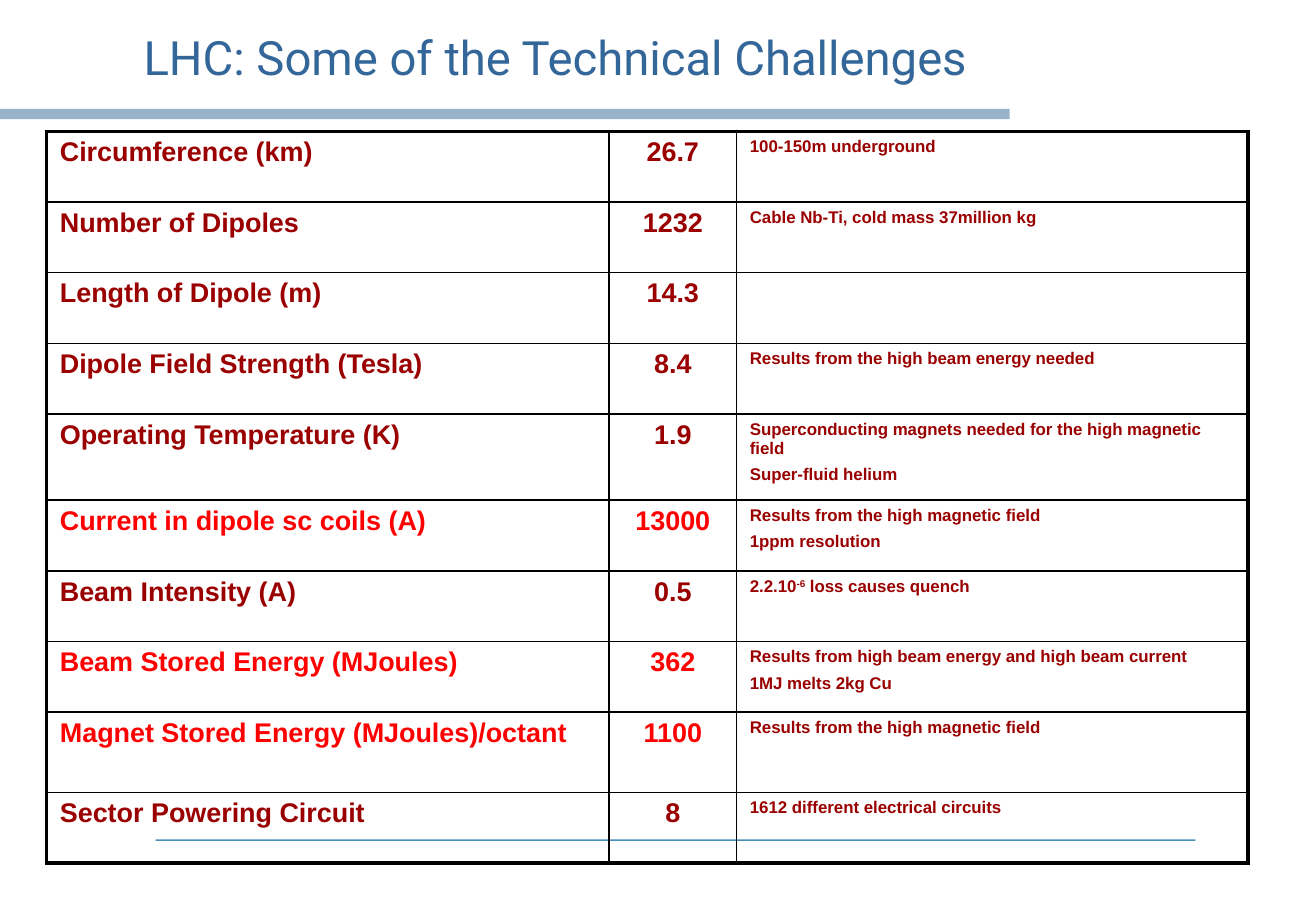
"""Build the slide on the technical challenges of the LHC."""
from lxml import etree
from pptx import Presentation
from pptx.dml.color import RGBColor
from pptx.enum.shapes import MSO_CONNECTOR, MSO_SHAPE
from pptx.enum.text import MSO_ANCHOR, PP_ALIGN
from pptx.oxml.ns import qn
from pptx.util import Pt

STRAIGHT = MSO_CONNECTOR.STRAIGHT
RECTANGLE = MSO_SHAPE.RECTANGLE
BOTTOM = MSO_ANCHOR.BOTTOM
LEFT, CENTER = PP_ALIGN.LEFT, PP_ALIGN.CENTER

TITLE = "LHC: Some of the Technical Challenges"
DARK, BRIGHT = "9A0000", "FF0000"
BLUE, RULE, BLACK = "336699", "0967A4", "000000"

# fmt: label, value, label colour, details; ^ encloses superscript
CHALLENGES = [
    ("Circumference (km)", "26.7", DARK, ["100-150m underground"]),
    ("Number of Dipoles", "1232", DARK, ["Cable Nb-Ti, cold mass 37million kg"]),
    ("Length of Dipole (m)", "14.3", DARK, []),
    ("Dipole Field Strength (Tesla)", "8.4", DARK,
     ["Results from the high beam energy needed"]),
    ("Operating Temperature (K)", "1.9", DARK,
     ["Superconducting magnets needed for the high magnetic field",
      "Super-fluid helium"]),
    ("Current in dipole sc coils (A)", "13000", BRIGHT,
     ["Results from the high magnetic field", "1ppm resolution"]),
    ("Beam Intensity (A)", "0.5", DARK, ["2.2.10^-6^ loss causes quench"]),
    ("Beam Stored Energy (MJoules)", "362", BRIGHT,
     ["Results from high beam energy and high beam current",
      "1MJ melts 2kg Cu"]),
    ("Magnet Stored Energy (MJoules)/octant", "1100", BRIGHT,
     ["Results from the high magnetic field"]),
    ("Sector Powering Circuit", "8", DARK,
     ["1612 different electrical circuits"]),
]
COLUMN_WIDTHS = [333.4, 75.6, 303.1]
ROW_HEIGHT = 41.9
TALL_ROWS = {4: 51.1, 8: 47.5}
OUTER, INNER = 2.25, 1
CELL_FORMAT = {"margin_left": Pt(7.9), "margin_right": Pt(7.9),
               "margin_top": Pt(3.6), "margin_bottom": Pt(3.6)}


def rgb(value):
    return RGBColor.from_string(value)


def set_opacity(shape, percent):
    color = next(shape._element.iter(qn("a:srgbClr")))
    etree.SubElement(color, qn("a:alpha"), val=str(percent * 1000))


def set_format(target, values):
    for name, value in values.items():
        setattr(target, name, value)


def write(para, text, size, color, face="Arial", bold=True):
    for index, part in enumerate(text.split("^")):
        span = para.add_run()
        span.text = part
        set_format(span.font, {"name": face, "size": Pt(size), "bold": bold})
        span.font.color.rgb = rgb(color)
        if index % 2:
            span._r.get_or_add_rPr().set("baseline", "30000")


def fill_cell(cell, lines, size, color, align):
    set_format(cell, CELL_FORMAT)
    frame = cell.text_frame
    for index, line in enumerate(lines):
        para = frame.add_paragraph() if index else frame.paragraphs[0]
        para.alignment = align
        if index:
            para.space_before = Pt(4.5)
        write(para, line, size, color)


def set_borders(cell, widths):
    properties = cell._tc.get_or_add_tcPr()
    for side, width in widths.items():
        line = etree.SubElement(properties, qn(f"a:ln{side}"), w=str(Pt(width)))
        fill = etree.SubElement(line, qn("a:solidFill"))
        etree.SubElement(fill, qn("a:srgbClr"), val=BLACK)
    cell.fill.background()


def add_frame(page):
    rule = page.shapes.add_connector(
        STRAIGHT, Pt(92.2), Pt(498), Pt(708.5), Pt(498))
    rule.line.color.rgb = rgb(RULE)
    rule.line.width = Pt(1)
    etree.SubElement(rule._element.spPr, qn("a:effectLst"))
    set_opacity(rule, 74)

    bar = page.shapes.add_shape(RECTANGLE, 0, Pt(64.6), Pt(598.5), Pt(6))
    bar.shadow.inherit = False
    bar.fill.solid()
    bar.fill.fore_color.rgb = rgb(BLUE)
    bar.line.fill.background()
    set_opacity(bar, 50)


def add_title(page):
    box = page.shapes.add_textbox(Pt(78), Pt(5.8), Pt(663), Pt(48.2))
    set_format(box.text_frame, {"word_wrap": True, "vertical_anchor": BOTTOM})
    write(box.text_frame.paragraphs[0], TITLE, 28, BLUE, "Roboto", False)


def add_challenges(page):
    heights = [TALL_ROWS.get(row, ROW_HEIGHT) for row in range(len(CHALLENGES))]
    table = page.shapes.add_table(
        len(heights), len(COLUMN_WIDTHS), Pt(27.6), Pt(77.8),
        Pt(sum(COLUMN_WIDTHS)), Pt(sum(heights))).table
    set_format(table, {"first_row": False, "horz_banding": False})
    for column, width in zip(table.columns, COLUMN_WIDTHS):
        column.width = Pt(width)
    last_row, last_column = len(heights) - 1, len(COLUMN_WIDTHS) - 1
    for row, (label, value, color, details) in enumerate(CHALLENGES):
        table.rows[row].height = Pt(heights[row])
        contents = [([label], 16, color, LEFT), ([value], 16, color, CENTER),
                    (details, 10, DARK, LEFT)]
        for column, content in enumerate(contents):
            cell = table.cell(row, column)
            fill_cell(cell, *content)
            edges = {"L": column == 0, "R": column == last_column,
                     "T": row == 0, "B": row == last_row}
            set_borders(cell, {side: OUTER if outside else INNER
                               for side, outside in edges.items()})


def main():
    deck = Presentation()
    set_format(deck, {"slide_width": Pt(780), "slide_height": Pt(540)})
    page = deck.slides.add_slide(deck.slide_layouts[6])
    add_frame(page)
    add_title(page)
    add_challenges(page)
    deck.save("out.pptx")


if __name__ == "__main__":
    main()
